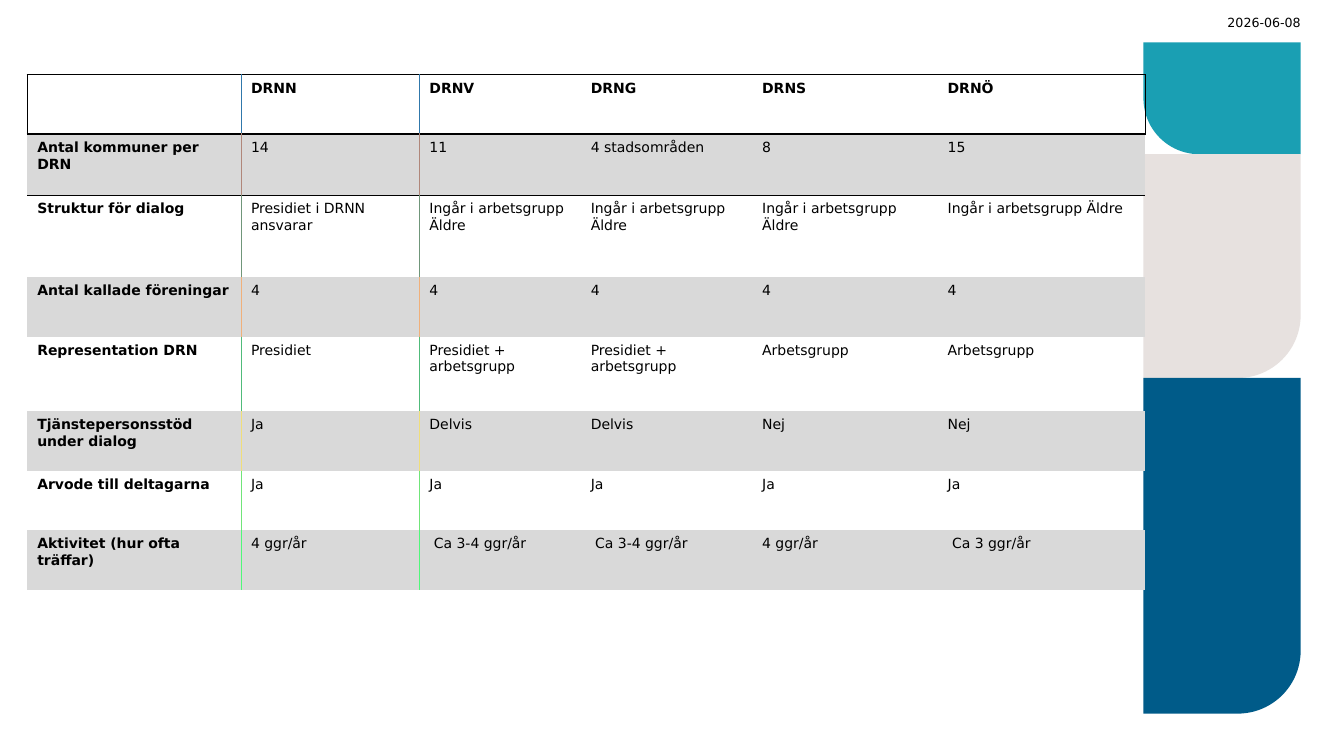
from pptx import Presentation
from pptx.dml.color import RGBColor
from pptx.enum.shapes import MSO_SHAPE
from pptx.enum.text import MSO_ANCHOR, PP_ALIGN
from pptx.oxml.ns import qn
from pptx.util import Inches, Pt
from lxml import etree

ROUND_CORNER = MSO_SHAPE.ROUND_1_RECTANGLE
MIDDLE = MSO_ANCHOR.MIDDLE
RIGHT = PP_ALIGN.RIGHT

BLACK = RGBColor(0x00, 0x00, 0x00)
GREY = RGBColor(0xD9, 0xD9, 0xD9)
TEAL = RGBColor(0x1A, 0x9F, 0xB3)
SAND = RGBColor(0xE7, 0xE1, 0xDF)
BLUE = RGBColor(0x00, 0x5B, 0x89)
DIVIDERS = [RGBColor.from_string(value) for value in (
    "3078AB", "B0877A", "70967A", "F0B07A", "50BB7A", "F0DE7A", "70E579", "50F879")]

NO_GRID_STYLE = "{2D5ABB26-0587-4C30-8999-92F81FD0307C}"
COLUMN_WIDTHS = [2.12, 1.77, 1.6, 1.7, 1.84, 2.06]
ROW_HEIGHTS = [0.59, 0.61, 0.81, 0.59, 0.74, 0.59, 0.59, 0.59]
GROUP = "Ingår i arbetsgrupp Äldre"
COUNCILS = [
    ["", "DRNN", "DRNV", "DRNG", "DRNS", "DRNÖ"],
    ["Antal kommuner per DRN", "14", "11", "4 stadsområden", "8", "15"],
    ["Struktur för dialog", "Presidiet i DRNN ansvarar"] + [GROUP] * 4,
    ["Antal kallade föreningar"] + ["4"] * 5,
    ["Representation DRN", "Presidiet", "Presidiet + arbetsgrupp",
     "Presidiet + arbetsgrupp", "Arbetsgrupp", "Arbetsgrupp"],
    ["Tjänstepersonsstöd under dialog", "Ja", "Delvis", "Delvis", "Nej", "Nej"],
    ["Arvode till deltagarna"] + ["Ja"] * 5,
    ["Aktivitet (hur ofta träffar)", "4 ggr/år", " Ca 3-4 ggr/år",
     " Ca 3-4 ggr/år", "4 ggr/år", " Ca 3 ggr/år"],
]


class SlideBuilder:
    """Holds the text style and the current slide."""

    def __init__(self, slide, font_name="DejaVu Sans"):
        self.slide = slide
        self.font_name = font_name

    def style(self, paragraph, size, bold=False):
        font = paragraph.font
        font.name = self.font_name
        font.size = Pt(size)
        font.bold = bold
        font.color.rgb = BLACK

    def block(self, left, top, width, height, rotation, rounding, color):
        center_x, center_y = left + width / 2, top + height / 2
        if rotation == 90:
            width, height = height, width
        shape = self.slide.shapes.add_shape(
            ROUND_CORNER, Inches(center_x - width / 2), Inches(center_y - height / 2),
            Inches(width), Inches(height))
        shape.rotation = rotation
        shape.adjustments[0] = rounding
        shape.shadow.inherit = False
        shape.fill.solid()
        shape.fill.fore_color.rgb = color
        shape.line.fill.background()

    def text(self, left, top, width, height, content, size):
        frame = self.slide.shapes.add_textbox(
            Inches(left), Inches(top), Inches(width), Inches(height)).text_frame
        frame.margin_left = frame.margin_right = frame.margin_top = frame.margin_bottom = 0
        frame.word_wrap = True
        frame.vertical_anchor = MIDDLE
        paragraph = frame.paragraphs[0]
        paragraph.text = content
        paragraph.alignment = RIGHT
        self.style(paragraph, size)

    def borders(self, cell, lines):
        properties = cell._tc.get_or_add_tcPr()
        for side in "LRTB":
            if side in lines:
                color, width = lines[side]
                line = etree.SubElement(properties, qn(f"a:ln{side}"), w=str(Pt(width)))
                fill = etree.SubElement(line, qn("a:solidFill"))
                etree.SubElement(fill, qn("a:srgbClr"), val=str(color))

    def table(self, left, top, rows, widths, heights, size):
        frame = self.slide.shapes.add_table(
            len(rows), len(widths), Inches(left), Inches(top),
            Inches(sum(widths)), Inches(sum(heights)))
        table = frame.table
        table.horz_banding = False
        table.first_row = False
        for style_id in frame.element.iter(qn("a:tableStyleId")):
            style_id.text = NO_GRID_STYLE
        for column, width in zip(table.columns, widths):
            column.width = Inches(width)
        for row, height in zip(table.rows, heights):
            row.height = Inches(height)
        for i, row in enumerate(rows):
            for j, content in enumerate(row):
                cell = table.cell(i, j)
                self.borders(cell, self.cell_lines(i, j, len(widths) - 1))
                if i % 2:
                    cell.fill.solid()
                    cell.fill.fore_color.rgb = GREY
                else:
                    cell.fill.background()
                paragraph = cell.text_frame.paragraphs[0]
                paragraph.text = content
                paragraph.line_spacing = Pt(12)
                self.style(paragraph, size, bold=i == 0 or j == 0)

    def cell_lines(self, row, column, last_column):
        outline = (BLACK, 1)
        lines = {}
        if row == 0:
            lines.update(T=outline, B=outline)
            if column == 0:
                lines["L"] = outline
            if column == last_column:
                lines["R"] = outline
        if row == 1:
            lines["T"] = outline
        if column < 2:
            lines["RL"[column]] = (DIVIDERS[row], 0.5)
        return lines


def main():
    presentation = Presentation()
    presentation.slide_width = Inches(13.33)
    presentation.slide_height = Inches(7.5)
    builder = SlideBuilder(presentation.slides.add_slide(presentation.slide_layouts[6]))
    top = 0.42
    for height, rotation, rounding, color in (
            (1.11, 180, 0.5, TEAL), (2.22, 90, 0.4, SAND), (3.33, 90, 0.4, BLUE)):
        builder.block(11.34, top, 1.56, height, rotation, rounding, color)
        top += height
    builder.table(0.27, 0.74, COUNCILS, COLUMN_WIDTHS, ROW_HEIGHTS, 10)
    builder.text(11.92, 0.15, 0.98, 0.15, "2026-06-08", 9)
    presentation.save("out.pptx")


if __name__ == "__main__":
    main()
